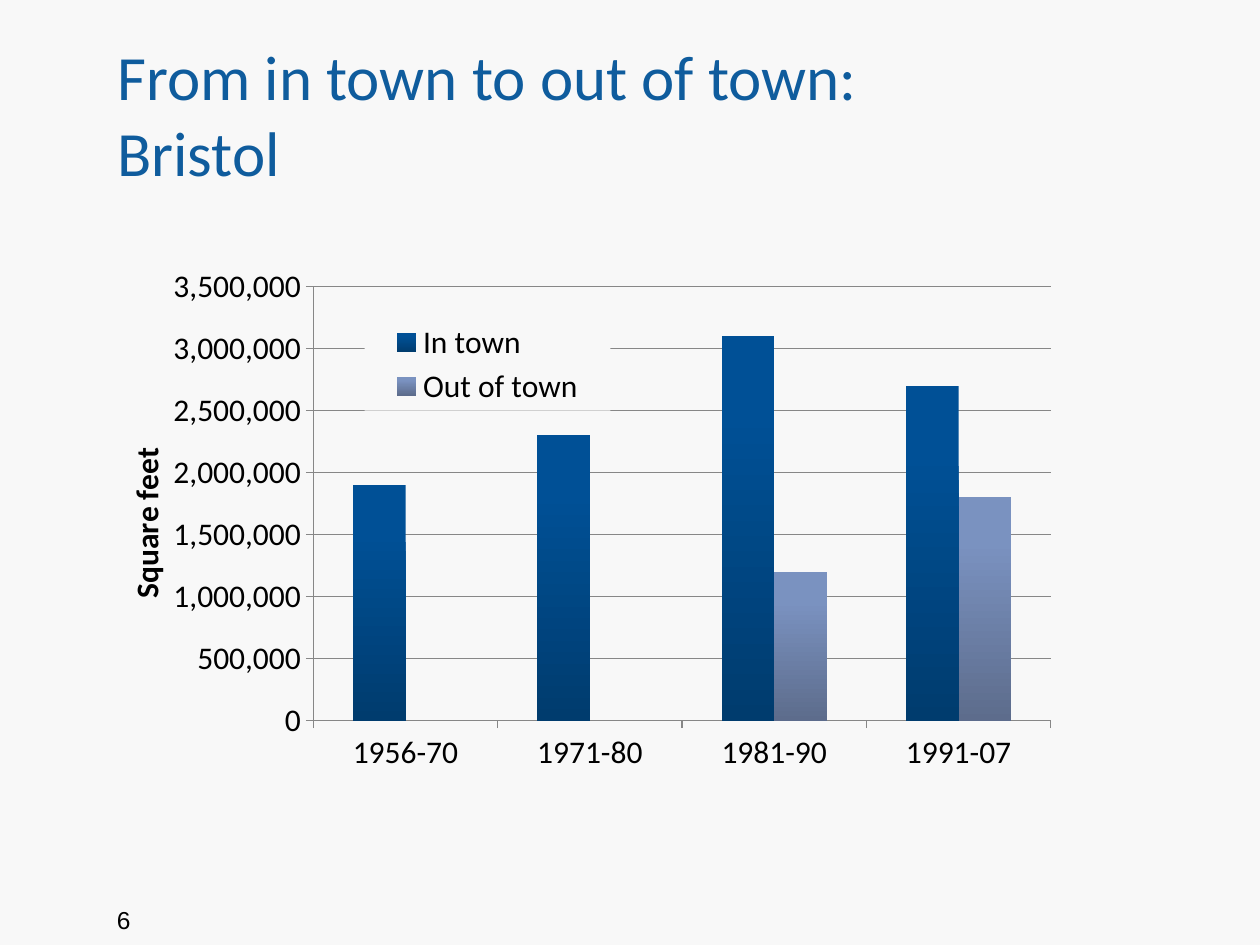
from lxml import etree
from pptx import Presentation
from pptx.chart.data import CategoryChartData
from pptx.dml.color import RGBColor
from pptx.enum.chart import XL_CHART_TYPE, XL_LEGEND_POSITION, XL_TICK_MARK
from pptx.enum.text import MSO_ANCHOR, PP_ALIGN
from pptx.oxml import parse_xml
from pptx.oxml.ns import nsdecls, qn
from pptx.util import Inches, Pt

BACKGROUND = RGBColor(0xF8, 0xF8, 0xF8)
TITLE_BLUE = RGBColor(0x0F, 0x5C, 0x9D)
BLACK = RGBColor(0, 0, 0)
GREY = RGBColor(0x87, 0x87, 0x87)
IN_TOWN = (RGBColor(0x00, 0x50, 0x96), RGBColor(0x00, 0x3C, 0x6E))
OUT_OF_TOWN = (RGBColor(0x7A, 0x92, 0xC0), RGBColor(0x5D, 0x6C, 0x8C))

PERIODS = ["1956-70", "1971-80", "1981-90", "1991-07"]
SERIES = [
    ("In town", (1900000, 2300000, 3100000, 2700000), IN_TOWN),
    ("Out of town", (0, 0, 1200000, 1800000), OUT_OF_TOWN),
]


def set_format(font, size, color, name="Calibri", bold=False):
    """Apply one set of character formats to a font."""
    formats = {"size": Pt(size), "name": name, "bold": bold}
    for key, value in formats.items():
        setattr(font, key, value)
    font.color.rgb = color


def set_layout(element, **places):
    """Place a chart part by fractions of the chart's size."""
    old = element.find(qn("c:layout"))
    if old is not None:
        element.remove(old)
    layout = parse_xml(f"<c:layout {nsdecls('c')}><c:manualLayout/></c:layout>")
    values = {"xMode": "edge", "yMode": "edge", **places}
    if "layoutTarget" in places:
        values = {"layoutTarget": places["layoutTarget"], **values}
    for key, value in values.items():
        etree.SubElement(layout[0], qn(f"c:{key}")).set("val", str(value))
    overlay = element.find(qn("c:overlay"))
    if overlay is not None:
        overlay.addprevious(layout)
    else:
        element.insert(0, layout)


def add_title(s, text):
    """Fill and place the title placeholder."""
    sp = s.shapes.title
    sp.left, sp.top, sp.width, sp.height = map(Inches, (0.83, 0.3, 6.77, 1.25))
    tf = sp.text_frame
    tf.text = text
    tf.vertical_anchor = MSO_ANCHOR.BOTTOM
    p = tf.paragraphs[0]
    p.alignment = PP_ALIGN.LEFT
    for r in p.runs:
        set_format(r.font, 36, TITLE_BLUE)


def add_page_number(s, number):
    """Write the page number at the lower left."""
    sp = s.shapes.add_textbox(Inches(0.83), Inches(7.13), Inches(6.93), Inches(0.37))
    tf = sp.text_frame
    tf.word_wrap = True
    r = tf.paragraphs[0].add_run()
    r.text = number
    set_format(r.font, 14, BLACK, "Arial")


def format_axes(chart):
    """Style both axes and title the value axis."""
    value_axis = chart.value_axis
    for axis in (chart.category_axis, value_axis):
        axis.major_tick_mark = XL_TICK_MARK.OUTSIDE
        axis.format.line.color.rgb = GREY
    value_axis.minimum_scale = 0
    value_axis.maximum_scale = 3500000
    value_axis.major_unit = 500000
    value_axis.major_gridlines.format.line.color.rgb = GREY
    value_axis.tick_labels.number_format = "#,##0"
    value_axis.tick_labels.number_format_is_linked = False
    tf = value_axis.axis_title.text_frame
    tf.text = "Square feet"
    set_format(tf.paragraphs[0].runs[0].font, 18, BLACK, bold=True)
    set_layout(value_axis.axis_title._element, x=0.02, y=0.3)


def format_legend(chart):
    """Set the filled legend over the plot."""
    chart.has_legend = True
    legend = chart.legend
    legend.position = XL_LEGEND_POSITION.RIGHT
    legend.include_in_layout = True
    set_format(legend.font, 18, BLACK)
    element = legend._element
    set_layout(element, x=0.26, y=0.1, w=0.24, h=0.15)
    element.find(qn("c:overlay")).addnext(parse_xml(
        f"<c:spPr {nsdecls('c', 'a')}><a:solidFill>"
        f'<a:srgbClr val="{BACKGROUND}"/></a:solidFill></c:spPr>'))


def add_floorspace_chart(s):
    """Add the clustered columns of floorspace by period."""
    data = CategoryChartData(number_format="#,##0")
    data.categories = PERIODS
    for name, values, _ in SERIES:
        data.add_series(name, values)
    chart = s.shapes.add_chart(
        XL_CHART_TYPE.COLUMN_CLUSTERED, Inches(0.78), Inches(2.03),
        Inches(8.13), Inches(4.92), data).chart
    chart.has_title = False
    set_format(chart.font, 18, BLACK)
    plot = chart.plots[0]
    plot.gap_width, plot.overlap, plot.vary_by_categories = 150, 0, False
    for series, (_, _, colors) in zip(plot.series, SERIES):
        fill = series.format.fill
        fill.gradient()
        fill.gradient_angle = 270
        for stop, color, position in zip(fill.gradient_stops, colors, (0.2, 1)):
            stop.color.rgb = color
            stop.position = position
    format_axes(chart)
    format_legend(chart)
    set_layout(chart._chartSpace.chart.plotArea, layoutTarget="inner",
               x=0.21, y=0.05, w=0.72, h=0.7)


def main():
    """Build and save the slide."""
    prs = Presentation()
    prs.slide_width, prs.slide_height = Inches(10), Inches(7.5)
    s = prs.slides.add_slide(prs.slide_layouts[5])
    s.background.fill.solid()
    s.background.fill.fore_color.rgb = BACKGROUND
    add_page_number(s, "6")
    add_title(s, "From in town to out of town:\vBristol")
    add_floorspace_chart(s)
    prs.save("out.pptx")


if __name__ == "__main__":
    main()
